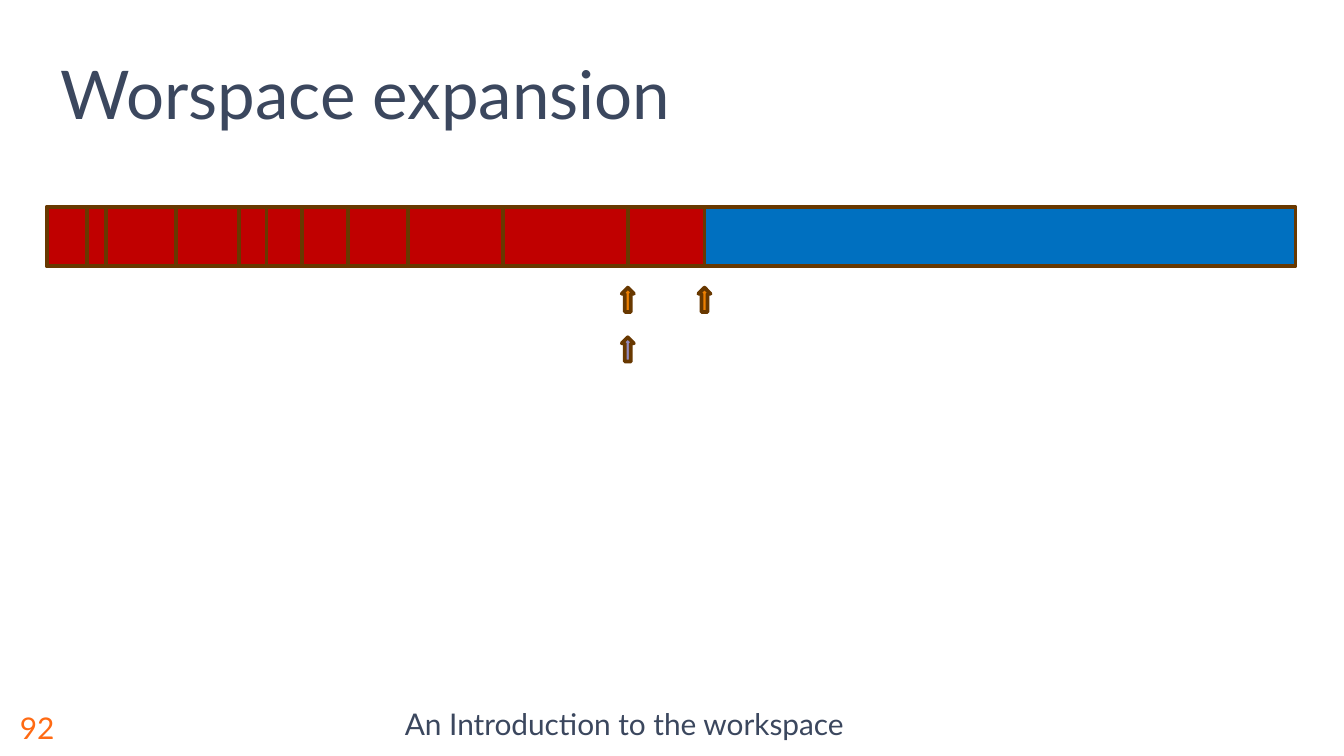
from dataclasses import dataclass
from itertools import accumulate

from pptx import Presentation
from pptx.dml.color import RGBColor
from pptx.enum.shapes import MSO_SHAPE as Preset
from pptx.enum.text import MSO_ANCHOR as Anchor, PP_ALIGN as Align
from pptx.slide import Slide
from pptx.util import Pt


@dataclass(frozen=True)
class Theme:
    font: str = "Lato"
    title_size: float = 36
    footer_size: float = 16
    ink: str = "3B475E"
    accent: str = "FF6A13"
    outline: str = "683800"
    outline_width: float = 2
    used: str = "C00000"
    free: str = "0070C0"
    pointer: str = "ED7F00"
    second_pointer: str = "928ABD"


@dataclass(frozen=True)
class Label:
    text: str
    left: float
    top: float
    width: float
    height: float
    size: float
    color: str
    anchor: Anchor = Anchor.MIDDLE
    align: Align = Align.LEFT
    spacing: float = 1.0


@dataclass(frozen=True)
class Block:
    left: float
    width: float
    color: str


@dataclass(frozen=True)
class Pointer:
    center: float
    top: float
    color: str


THEME = Theme()
BAR_LEFT, BAR_TOP, BAR_WIDTH, BAR_HEIGHT = 25.2, 110.9, 668.9, 31.7
POINTER_WIDTH, POINTER_HEIGHT = 6.5, 13
USED_WIDTHS = [21.6, 10.1, 37.4, 33.9, 14.6, 19, 24.8, 32, 50.8, 66.9, 41.1]


def draw_label(slide: Slide, label: Label) -> None:
    box = slide.shapes.add_textbox(
        Pt(label.left), Pt(label.top), Pt(label.width), Pt(label.height))
    frame = box.text_frame
    frame.word_wrap = True
    frame.vertical_anchor = label.anchor
    paragraph = frame.paragraphs[0]
    paragraph.alignment = label.align
    paragraph.line_spacing = label.spacing
    run = paragraph.add_run()
    run.text = label.text
    run.font.name = THEME.font
    run.font.size = Pt(label.size)
    run.font.color.rgb = RGBColor.from_string(label.color)


def draw_shape(slide: Slide, preset: Preset, left: float, top: float,
               width: float, height: float, color: str, rotation: float = 0) -> None:
    shape = slide.shapes.add_shape(preset, Pt(left), Pt(top), Pt(width), Pt(height))
    shape.rotation = rotation
    shape.shadow.inherit = False
    shape.fill.solid()
    shape.fill.fore_color.rgb = RGBColor.from_string(color)
    shape.line.color.rgb = RGBColor.from_string(THEME.outline)
    shape.line.width = Pt(THEME.outline_width)


def draw_block(slide: Slide, block: Block) -> None:
    draw_shape(slide, Preset.RECTANGLE, block.left, BAR_TOP,
               block.width, BAR_HEIGHT, block.color)


def draw_pointer(slide: Slide, pointer: Pointer) -> None:
    draw_shape(slide, Preset.DOWN_ARROW, pointer.center - POINTER_WIDTH / 2, pointer.top,
               POINTER_WIDTH, POINTER_HEIGHT, pointer.color, rotation=180)


def main() -> None:
    deck = Presentation()
    deck.slide_width, deck.slide_height = Pt(720), Pt(405)
    slide = deck.slides.add_slide(deck.slide_layouts[6])

    # Title, footer and page number
    for label in (
        Label("An Introduction to the workspace", 56.2, 373.7, 556.6, 31.7,
              THEME.footer_size, THEME.ink, align=Align.CENTER, spacing=0.8),
        Label("92", 3.6, 373.7, 52.6, 31.7, THEME.footer_size, THEME.accent),
        Label("Worspace expansion", 25.2, 20.9, 590.4, 54,
              THEME.title_size, THEME.ink, anchor=Anchor.BOTTOM),
    ):
        draw_label(slide, label)

    # Whole workspace, with the used blocks side by side on top
    draw_block(slide, Block(BAR_LEFT, BAR_WIDTH, THEME.free))
    edges = list(accumulate(USED_WIDTHS, initial=BAR_LEFT))
    for left, width in zip(edges, USED_WIDTHS):
        draw_block(slide, Block(left, width, THEME.used))

    # Pointers to the start and end of the last used block
    last_start, last_end = edges[-2:]
    for pointer in (
        Pointer(last_start, 154.1, THEME.pointer),
        Pointer(last_start, 180.7, THEME.second_pointer),
        Pointer(last_end, 154.1, THEME.pointer),
    ):
        draw_pointer(slide, pointer)

    deck.save("out.pptx")


if __name__ == "__main__":
    main()
